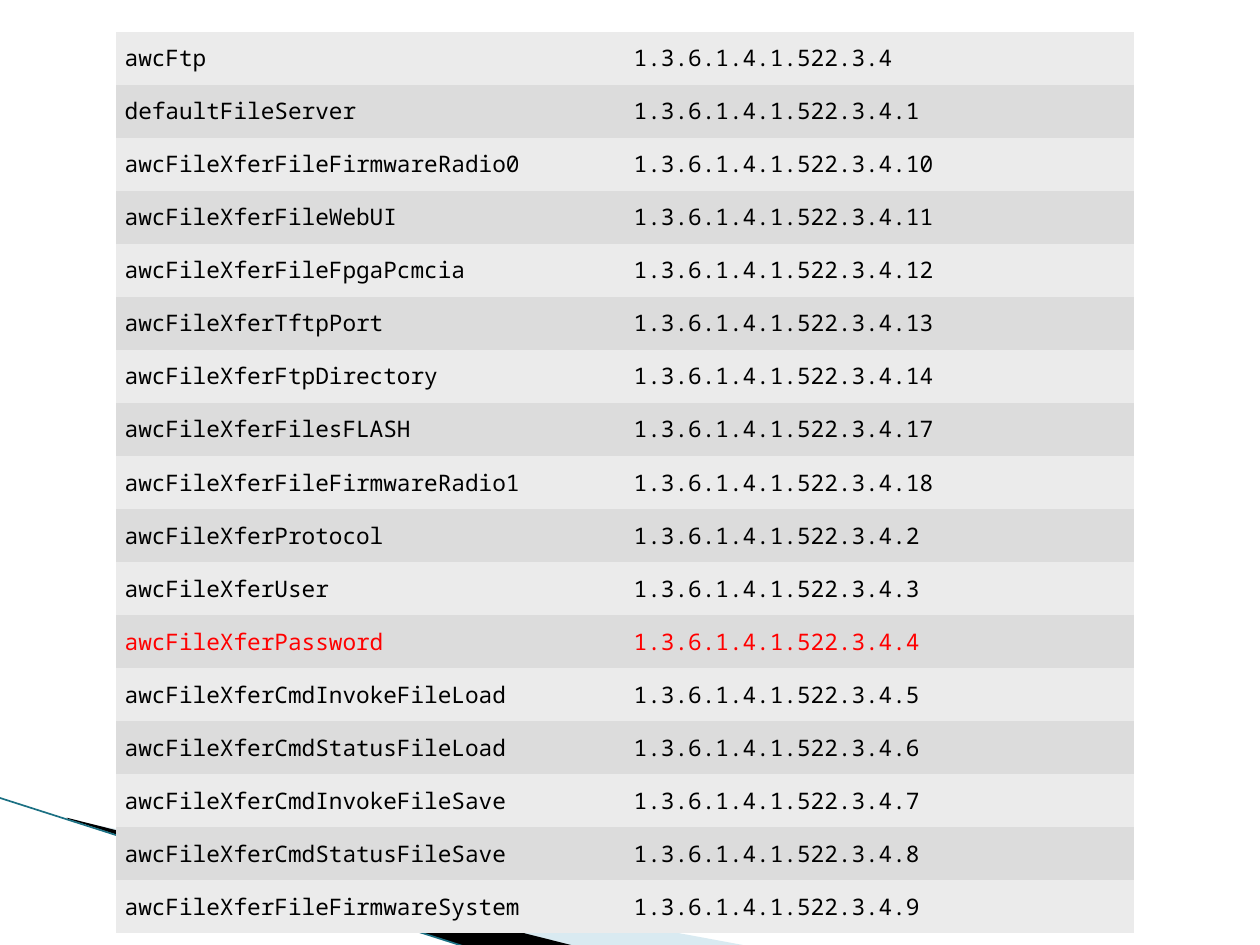
from dataclasses import dataclass

from lxml import etree
from pptx import Presentation
from pptx import util as u
from pptx.dml.color import RGBColor
from pptx.enum import shapes, text
from pptx.oxml.ns import qn


@dataclass(frozen=True)
class Theme:
    font: str = "Noto Sans Mono"
    size: float = 13
    ink: str = "000000"
    alert: str = "FF0000"
    bands: tuple = ("EBEBEB", "DCDCDC")
    pale: str = "A0CBDC"
    edge: str = "1B7083"


THEME = Theme()
WIDE, HIGH = 10, 7.5
LEFT, TOP = 0.92, 0.25
COL, ROW = 4.04, 7.16 / 17
BASE = "1.3.6.1.4.1.522.3.4"
ALERT = "awcFileXferPassword"
ITEMS = [
    ("awcFtp", ""),
    ("defaultFileServer", ".1"),
    ("awcFileXferFileFirmwareRadio0", ".10"),
    ("awcFileXferFileWebUI", ".11"),
    ("awcFileXferFileFpgaPcmcia", ".12"),
    ("awcFileXferTftpPort", ".13"),
    ("awcFileXferFtpDirectory", ".14"),
    ("awcFileXferFilesFLASH", ".17"),
    ("awcFileXferFileFirmwareRadio1", ".18"),
    ("awcFileXferProtocol", ".2"),
    ("awcFileXferUser", ".3"),
    (ALERT, ".4"),
    ("awcFileXferCmdInvokeFileLoad", ".5"),
    ("awcFileXferCmdStatusFileLoad", ".6"),
    ("awcFileXferCmdInvokeFileSave", ".7"),
    ("awcFileXferCmdStatusFileSave", ".8"),
    ("awcFileXferFileFirmwareSystem", ".9"),
]


def color(code):
    return RGBColor.from_string(code)


def add_wedge(slide, points, code, alpha=None):
    """Draw a filled outline; alpha is its opacity in percent."""
    spots = [(u.Inches(x), u.Inches(y)) for x, y in points]
    pen = slide.shapes.build_freeform(*spots[0])
    pen.add_line_segments(spots[1:], close=True)
    wedge = pen.convert_to_shape()
    wedge.shadow.inherit = False
    wedge.line.fill.background()
    wedge.fill.solid()
    wedge.fill.fore_color.rgb = color(code)
    if alpha is not None:
        tint = wedge._element.spPr.find(".//" + qn("a:srgbClr"))
        etree.SubElement(tint, qn("a:alpha"), val=str(alpha * 1000))


def add_edge(slide, start, end):
    ends = [u.Inches(n) for n in (*start, *end)]
    edge = slide.shapes.add_connector(shapes.MSO_CONNECTOR.STRAIGHT, *ends)
    edge.line.color.rgb = color(THEME.edge)
    edge.line.width = u.Pt(0.95)
    etree.SubElement(edge._element.spPr, qn("a:effectLst"))


def clear_sides(cell):
    props = cell._tc.get_or_add_tcPr()
    for i, side in enumerate("LRTB"):
        line = etree.Element(qn("a:ln" + side), w="0")
        etree.SubElement(line, qn("a:noFill"))
        props.insert(i, line)


def fill_cell(cell, words, ink, band):
    cell.fill.solid()
    cell.fill.fore_color.rgb = color(band)
    clear_sides(cell)
    cell.vertical_anchor = text.MSO_ANCHOR.MIDDLE
    cell.margin_left = cell.margin_right = u.Inches(0.07)
    cell.margin_top = cell.margin_bottom = u.Inches(0.04)
    cell.text = words
    font = cell.text_frame.paragraphs[0].font
    font.name, font.size = THEME.font, u.Pt(THEME.size)
    font.color.rgb = color(ink)


def add_list(slide):
    count = len(ITEMS)
    box = [u.Inches(n) for n in (LEFT, TOP, 2 * COL, count * ROW)]
    table = slide.shapes.add_table(count, 2, *box).table
    table.first_row = table.horz_banding = False
    for col in table.columns:
        col.width = u.Inches(COL)
    for i, (name, tail) in enumerate(ITEMS):
        table.rows[i].height = u.Inches(ROW)
        ink = THEME.alert if name == ALERT else THEME.ink
        for j, words in enumerate((name, BASE + tail)):
            fill_cell(table.cell(i, j), words, ink, THEME.bands[i % 2])


def main():
    deck = Presentation()
    deck.slide_width, deck.slide_height = u.Inches(WIDE), u.Inches(HIGH)
    slide = deck.slides.add_slide(deck.slide_layouts[6])
    add_wedge(slide, [(0.55, 6.51), (5.95, 7.51), (4.56, 7.51), (0.55, 6.5)],
              THEME.pale, alpha=40)
    add_wedge(slide, [(0.53, 6.49), (4.57, 7.51), (3.72, 7.52), (0.54, 6.5)],
              THEME.ink)
    add_edge(slide, (-0.01, 6.33), (3.71, 7.52))
    add_list(slide)
    deck.save("out.pptx")


if __name__ == "__main__":
    main()
